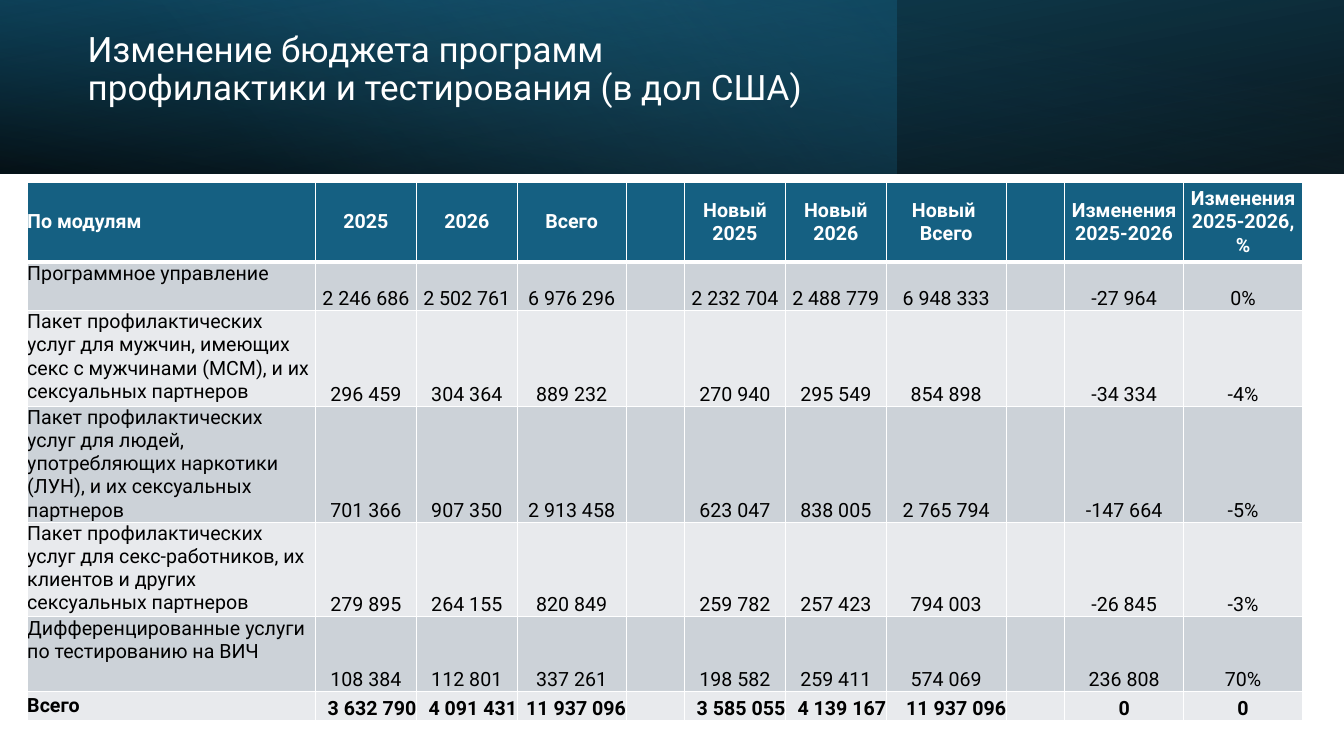
from lxml.etree import SubElement as Sub
from pptx import Presentation
from pptx.dml.color import RGBColor as RGB
from pptx.enum.shapes import MSO_SHAPE as Shape
from pptx.enum.text import MSO_ANCHOR as Anchor, MSO_AUTO_SIZE as Fit, PP_ALIGN as Align
from pptx.oxml.ns import qn
from pptx.util import Inches, Pt

HUES = {"white": "FFFFFF", "black": "000000", "head": "156082",
        "deep": "104862", "sky": "46B1E1", "odd": "CCD2D8", "even": "E8EAED"}

WIDTHS = [2.86, 1, 1, 1.08, 0.58, 1, 1, 1.19, 0.58, 1.18, 1.18]
HEIGHTS = [0.79, 0.48, 0.95, 1.09, 0.94, 0.74, 0.29]
ROWS = [
    ["По модулям", "2025", "2026", "Всего", "", "Новый 2025", "Новый 2026",
     "Новый \nВсего", "", "Изменения 2025-2026", "Изменения 2025-2026, %"],
    ["Программное управление", "2 246 686", "2 502 761", "6 976 296", "",
     "2 232 704", "2 488 779", "6 948 333", "", "-27 964", "0%"],
    ["Пакет профилактических услуг для мужчин, имеющих секс с мужчинами (МСМ), "
     "и их сексуальных партнеров", "296 459", "304 364", "889 232", "",
     "270 940", "295 549", "854 898", "", "-34 334", "-4%"],
    ["Пакет профилактических услуг для людей, употребляющих наркотики (ЛУН), "
     "и их сексуальных партнеров", "701 366", "907 350", "2 913 458", "",
     "623 047", "838 005", "2 765 794", "", "-147 664", "-5%"],
    ["Пакет профилактических услуг для секс-работников, их клиентов и других "
     "сексуальных партнеров", "279 895", "264 155", "820 849", "",
     "259 782", "257 423", "794 003", "", "-26 845", "-3%"],
    ["Дифференцированные услуги по тестированию на ВИЧ", "108 384", "112 801",
     "337 261", "", "198 582", "259 411", "574 069", "", "236 808", "70%"],
    ["Всего", "3 632 790", "4 091 431", "11 937 096", "",
     "3 585 055", "4 139 167", "11 937 096", "", "0", "0"],
]


class Deck:
    def __init__(self, font):
        self.font = font
        self.prs = Presentation()
        self.prs.slide_width, self.prs.slide_height = Inches(13.33), Inches(7.5)
        self.slide = self.prs.slides.add_slide(self.prs.slide_layouts[5])

    def style(self, frame, size, hue, bold=False, align=Align.LEFT):
        for par in frame.paragraphs:
            par.alignment = align
            font = par.font
            font.name, font.size, font.bold = self.font, Pt(size), bold
            font.color.rgb = RGB.from_string(HUES[hue])

    def title(self, text, left, top, width, height):
        box = self.slide.shapes.title
        box.left, box.top = Inches(left), Inches(top)
        box.width, box.height = Inches(width), Inches(height)
        frame = box.text_frame
        frame.text, frame.word_wrap = text, True
        frame.auto_size, frame.vertical_anchor = Fit.NONE, Anchor.TOP
        self.style(frame, 25, "white")
        frame.paragraphs[0].line_spacing = 0.9

    def band(self, width, stops, angle, flip=False, turn=0):
        """Add a see-through gradient behind the title; stops are (place, hue, alpha) in percent."""
        band = self.slide.shapes.add_shape(Shape.RECTANGLE, 0, 0, Inches(width), Inches(1.72))
        band.shadow.inherit = False
        band.line.fill.background()
        band.rotation = turn
        props = band._element.spPr
        if flip:
            props.find(qn("a:xfrm")).set("flipH", "1")
        band.fill.gradient()
        grad = props.find(qn("a:gradFill"))
        grad.set("rotWithShape", "1")
        for kid in list(grad):
            grad.remove(kid)
        group = Sub(grad, qn("a:gsLst"))
        for place, hue, alpha in stops:
            stop = Sub(group, qn("a:gs"), pos=str(place * 1000))
            color = Sub(stop, qn("a:srgbClr"), val=HUES[hue])
            Sub(color, qn("a:alpha"), val=str(alpha * 1000))
        Sub(grad, qn("a:lin"), ang=str(angle * 60000), scaled="0")
        self.slide.shapes.title._element.addprevious(band._element)

    def edge(self, cell, side, width):
        props = cell._tc.get_or_add_tcPr()
        line = Sub(props, qn("a:ln" + side), w=str(Pt(width)))
        Sub(Sub(line, qn("a:solidFill")), qn("a:srgbClr"), val=HUES["white"])

    def cell(self, cell, text, fill, hue, bold, align, anchor, edges):
        cell.margin_left = cell.margin_right = cell.margin_top = cell.margin_bottom = 0
        cell.vertical_anchor = anchor
        for side, width in edges.items():
            self.edge(cell, side, width)
        cell.fill.solid()
        cell.fill.fore_color.rgb = RGB.from_string(HUES[fill])
        cell.text = text
        self.style(cell.text_frame, 14, hue, bold, align)

    def table(self, left, top, widths, heights, rows):
        grid = self.slide.shapes.add_table(
            len(rows), len(widths), Inches(left), Inches(top),
            Inches(sum(widths)), Inches(sum(heights))).table
        for col, width in zip(grid.columns, widths):
            col.width = Inches(width)
        for row, height in zip(grid.rows, heights):
            row.height = Inches(height)
        last = len(rows) - 1
        for r, row in enumerate(rows):
            head, total = r == 0, r == last
            fill = "head" if head else "odd" if r % 2 else "even"
            edges = {"L": 1, "R": 1, "T": 3 if r == 1 else 1, "B": 3 if head else 1}
            for c, text in enumerate(row):
                if c == 0:
                    align = Align.LEFT
                    anchor = Anchor.MIDDLE if head or total else Anchor.TOP
                else:
                    align = Align.RIGHT if total and c < 9 else Align.CENTER
                    anchor = Anchor.MIDDLE if head else Anchor.BOTTOM
                self.cell(grid.cell(r, c), text, fill, "white" if head else "black",
                          head or total, align, anchor, edges)


def main():
    deck = Deck("Roboto")
    deck.band(13.33, [(0, "black", 96), (100, "deep", 100)], 100, flip=True, turn=180)
    deck.band(8.89, [(0, "head", 41), (74, "sky", 0)], 140)
    deck.band(13.33, [(0, "black", 63), (78, "head", 15)], 260, flip=True)
    deck.title("Изменение бюджета программ профилактики и тестирования (в дол США)",
               0.77, 0.27, 7.72, 1.27)
    deck.table(0.27, 1.81, WIDTHS, HEIGHTS, ROWS)
    deck.prs.save("out.pptx")


if __name__ == "__main__":
    main()
